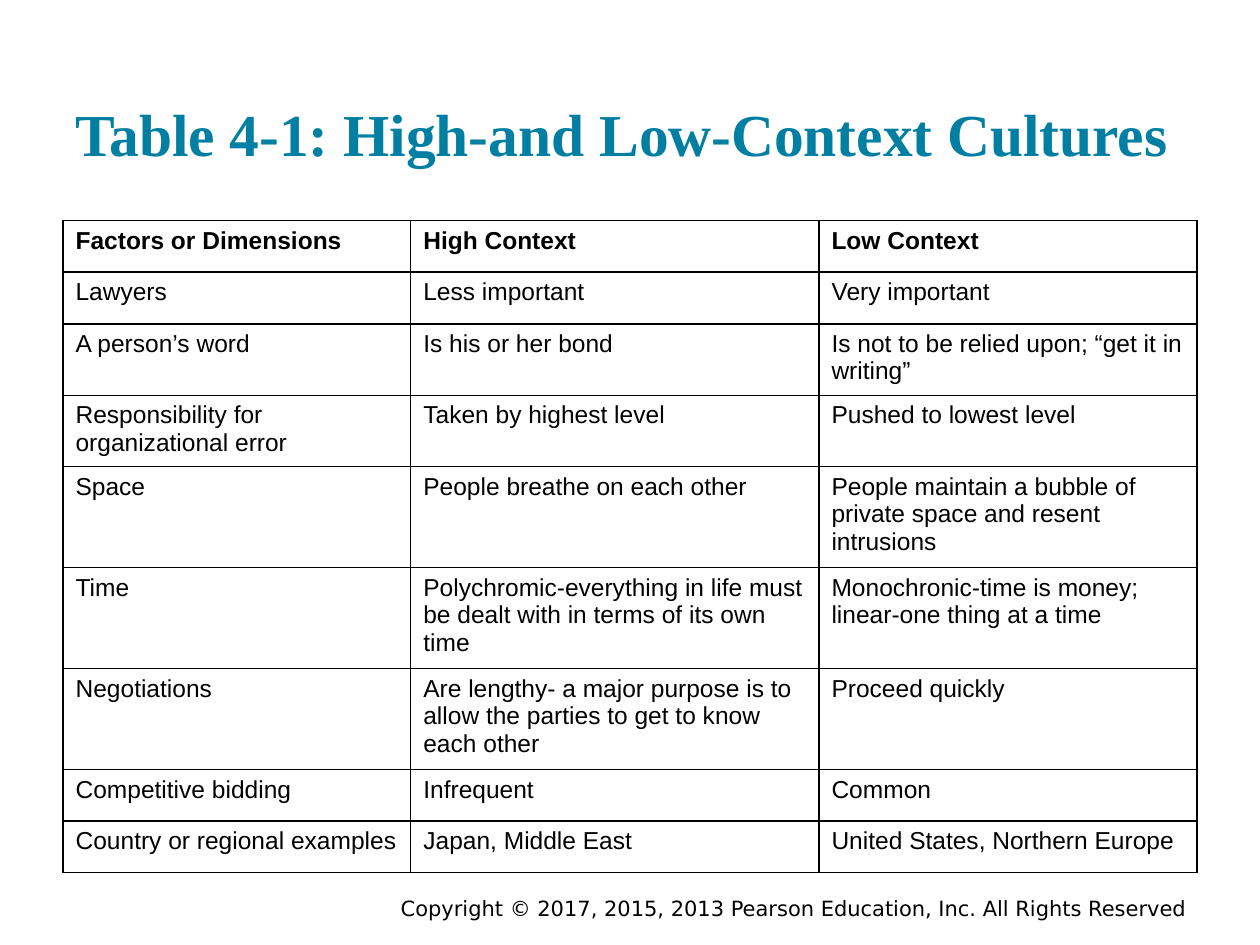
from lxml import etree
from pptx import Presentation
from pptx import util as u
from pptx.dml.color import RGBColor
from pptx.enum import text
from pptx.oxml import ns

WIDE, HIGH = 10, 7.5
COLS = (2.76, 3.24, 3)
ROW = 0.41
ROWS = (
    ("Factors or Dimensions", "High Context", "Low Context"),
    ("Lawyers", "Less important", "Very important"),
    ("A person’s word", "Is his or her bond",
     "Is not to be relied upon; “get it in writing”"),
    ("Responsibility for organizational error", "Taken by highest level",
     "Pushed to lowest level"),
    ("Space", "People breathe on each other",
     "People maintain a bubble of private space and resent intrusions"),
    ("Time",
     "Polychromic-everything in life must be dealt with in terms of its own time",
     "Monochronic-time is money; linear-one thing at a time"),
    ("Negotiations",
     "Are lengthy- a major purpose is to allow the parties to get to know each other",
     "Proceed quickly"),
    ("Competitive bidding", "Infrequent", "Common"),
    ("Country or regional examples", "Japan, Middle East",
     "United States, Northern Europe"),
)


def paint(color, tint):
    color.rgb = RGBColor.from_string(tint)


def style(frame, face, size, tint="000000", bold=False):
    for run in frame.paragraphs[0].runs:
        run.font.name = face
        run.font.size = u.Pt(size)
        run.font.bold = bold
        paint(run.font.color, tint)


def label(slide, box, words):
    frame = slide.shapes.add_textbox(*map(u.Inches, box)).text_frame
    frame.word_wrap = True
    frame.text = words
    return frame


def title(slide, box):
    frame = label(slide, box, "Table 4-1: High-and Low-Context Cultures")
    frame.vertical_anchor = text.MSO_ANCHOR.BOTTOM
    frame.margin_top = frame.margin_bottom = u.Inches(0.1)
    style(frame, "Times New Roman", 34, "007FA3", True)


def footer(slide, box):
    frame = label(slide, box, "Copyright © 2017, 2015, 2013 Pearson Education, Inc. "
                              "All Rights Reserved")
    frame.paragraphs[0].alignment = text.PP_ALIGN.RIGHT
    style(frame, "DejaVu Sans", 12)


def border(cell, tint="000000", width=1):
    props = cell._tc.get_or_add_tcPr()
    for spot, side in enumerate(("lnL", "lnR", "lnT", "lnB")):
        line = etree.Element(ns.qn("a:" + side), w=str(u.Pt(width)))
        fill = etree.SubElement(line, ns.qn("a:solidFill"))
        etree.SubElement(fill, ns.qn("a:srgbClr"), val=tint)
        props.insert(spot, line)


def grid(slide, box):
    table = slide.shapes.add_table(len(ROWS), len(COLS), *map(u.Inches, box)).table
    table.horz_banding = False
    for col, width in zip(table.columns, COLS):
        col.width = u.Inches(width)
    for top, (row, words) in enumerate(zip(table.rows, ROWS)):
        row.height = u.Inches(ROW)
        for cell, word in zip(row.cells, words):
            cell.fill.background()
            border(cell)
            cell.text_frame.text = word
            style(cell.text_frame, "Arial", 14, bold=top == 0)


def main():
    deck = Presentation()
    deck.slide_width, deck.slide_height = u.Inches(WIDE), u.Inches(HIGH)
    slide = deck.slides.add_slide(deck.slide_layouts[6])
    edge = 0.05 * WIDE
    footer(slide, (1.69, 7.06, 7.83, 0.3))
    title(slide, (edge, 0.24, WIDE - 2 * edge, 0.16 * HIGH))
    grid(slide, (edge, 1.75, sum(COLS), ROW * len(ROWS)))
    deck.save("out.pptx")


if __name__ == "__main__":
    main()
